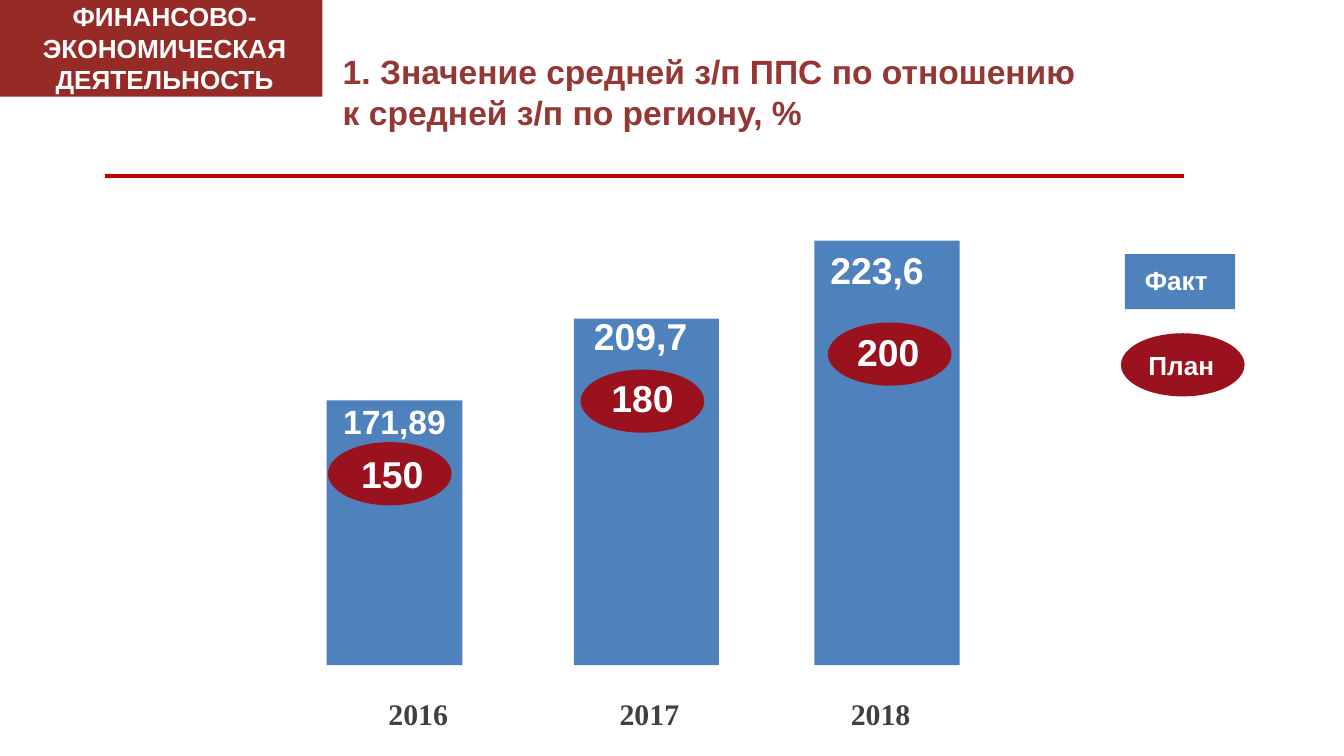
from pptx import Presentation
from pptx.dml.color import RGBColor
from pptx.enum.shapes import MSO_CONNECTOR, MSO_SHAPE
from pptx.enum.text import MSO_ANCHOR as ANCHOR, PP_ALIGN as ALIGN
from pptx.oxml.ns import qn
from pptx.util import Inches, Pt
from lxml.etree import SubElement

WHITE, BLUE, RED = "FFFFFF", "4F81BD", "99121E"
SLIDE_W = 10
SLIDE_H = SLIDE_W * 9 / 16
BASELINE = 4.95
OVAL_W, OVAL_H = 0.92, 0.47


def rgb(color):
    return RGBColor.from_string(color)


def box(*lengths):
    return [Inches(v) for v in lengths]


def set_text(sp, text, size=20, color=WHITE, font="Arial", align=ALIGN.LEFT,
             anchor=ANCHOR.TOP, insets=(0.1, 0.05, 0.1, 0.05), spacing=None, tabs=()):
    """Fill a shape with bold text, one paragraph per line; tabs are in inches."""
    tf = sp.text_frame
    tf.word_wrap = True
    tf.vertical_anchor = anchor
    tf.margin_left, tf.margin_top, tf.margin_right, tf.margin_bottom = box(*insets)
    tf.text = text
    for p in tf.paragraphs:
        p.alignment = align
        if spacing:
            p.line_spacing = spacing
        if tabs:
            tab_list = SubElement(p._p.get_or_add_pPr(), qn("a:tabLst"))
            for pos in tabs:
                SubElement(tab_list, qn("a:tab"), pos=str(Inches(pos)), algn="l")
        for r in p.runs:
            r.font.name, r.font.size, r.font.bold = font, Pt(size), True
            r.font.color.rgb = rgb(color)


def add_text(s, text, x, y, w, h, **fmt):
    set_text(s.shapes.add_textbox(*box(x, y, w, h)), text, **fmt)


def add_block(s, kind, x, y, w, h, fill):
    sp = s.shapes.add_shape(kind, *box(x, y, w, h))
    sp.shadow.inherit = False
    sp.fill.solid()
    sp.fill.fore_color.rgb = rgb(fill)
    sp.line.fill.background()
    return sp


def add_bar(s, x, top, w):
    return add_block(s, MSO_SHAPE.RECTANGLE, x, top, w, BASELINE - top, BLUE)


def add_plan_oval(s, x, y):
    add_block(s, MSO_SHAPE.OVAL, x, y, OVAL_W, OVAL_H, RED)


def add_rule(s, x1, x2, y, color, width):
    line = s.shapes.add_connector(MSO_CONNECTOR.STRAIGHT, *box(x1, y, x2, y))
    line.line.color.rgb = rgb(color)
    line.line.width = Pt(width)
    SubElement(line._element.spPr, qn("a:effectLst"))


def add_header(s):
    add_rule(s, 8.81, 0.78, 1.31, "C00000", 2)
    title = s.shapes.title
    title.left, title.top, title.width, title.height = box(2.55, 0.37, 6.03, 0.78)
    set_text(title, "1. Значение средней з/п ППС по отношению\nк средней з/п по региону, %",
             size=18, color="953735", insets=(0, 0, 0, 0), spacing=1.03)
    add_block(s, MSO_SHAPE.RECTANGLE, 0, -0.01, 2.4, 0.73, "952A27")
    add_text(s, "ФИНАНСОВО-ЭКОНОМИЧЕСКАЯ ДЕЯТЕЛЬНОСТЬ", 0.05, -0.05, 2.35, 0.81,
             size=14, align=ALIGN.CENTER, anchor=ANCHOR.MIDDLE)


def add_bars(s):
    bar_2016 = add_bar(s, 2.43, 2.98, 1.01)
    set_text(bar_2016, "171,89", size=18, align=ALIGN.CENTER, insets=(0, 0, 0, 0))
    add_plan_oval(s, 2.44, 3.29)
    add_text(s, "150", 2.57, 3.31, 0.7, 0.44, align=ALIGN.CENTER)

    add_bar(s, 4.27, 2.37, 1.08)
    add_text(s, "209,7", 4.32, 2.28, 1.08, 0.44)
    add_plan_oval(s, 4.32, 2.75)
    add_text(s, "180", 4.45, 2.74, 0.8, 0.44)

    add_bar(s, 6.06, 1.79, 1.08)
    add_text(s, "223,6", 6.08, 1.79, 1.23, 0.44)
    add_plan_oval(s, 6.16, 2.4)
    add_text(s, "200", 6.28, 2.4, 0.77, 0.44)

    add_text(s, "2016\t2017\t2018", 2.74, 5.13, 4.65, 0.37, size=16, color="404040",
             font="Times New Roman", insets=(0.15, 0.05, 0.1, 0.05), tabs=(1.72, 3.44))


def add_legend(s):
    add_block(s, MSO_SHAPE.RECTANGLE, 8.37, 1.89, 0.82, 0.41, BLUE)
    add_text(s, "Факт", 8.42, 1.92, 0.73, 0.34, size=14)
    add_plan_oval(s, 8.34, 2.48)
    add_text(s, "План", 8.3, 2.55, 0.98, 0.34, size=14, align=ALIGN.CENTER)


def main():
    prs = Presentation()
    prs.slide_width, prs.slide_height = box(SLIDE_W, SLIDE_H)
    s = prs.slides.add_slide(prs.slide_layouts[5])
    add_header(s)
    add_bars(s)
    add_legend(s)
    prs.save("out.pptx")


if __name__ == "__main__":
    main()
